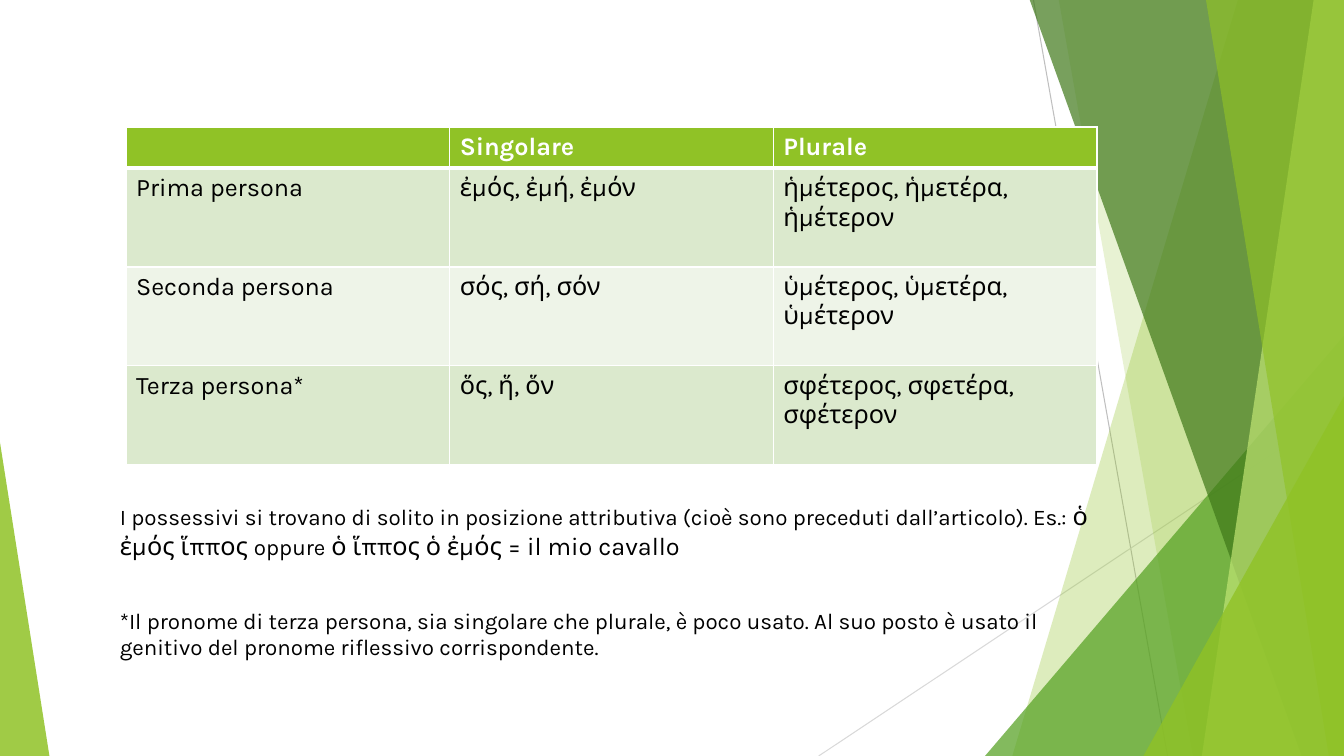
"""Build a slide on Greek possessive adjectives, with a table and two notes."""
import pptx
import pptx.dml.color
import pptx.enum.shapes
import pptx.oxml
import pptx.oxml.ns
import pptx.util
from pptx.util import Inches

FONT = "Karla"
COLORS = {
    "green": "90C226", "mid": "54A021", "dark": "3F7819", "lime": "C0E474",
    "band": "DBE9CD", "pale": "EEF4E8", "white": "FFFFFF", "black": "000000",
    "gray": "BFBFBF", "silver": "D9D9D9",
}
NS = pptx.oxml.ns.nsdecls("a")
TOP, BOTTOM, RIGHT = -0.01, 7.5, 13.33

ROWS = [
    ("", "Singolare", "Plurale"),
    ("Prima persona", "ἐμός, ἐμή, ἐμόν", "ἡμέτερος, ἡμετέρα, ἡμέτερον"),
    ("Seconda persona", "σός, σή, σόν", "ὑμέτερος, ὑμετέρα, ὑμέτερον"),
    ("Terza persona*", "ὅς, ἥ, ὅν", "σφέτερος, σφετέρα, σφέτερον"),
]
POSITION_NOTE = [
    ("I possessivi si trovano di solito in posizione attributiva "
     "(cioè sono preceduti dall’articolo). Es.: ", 16),
    ("ὁ ἐμός ἵππος ", 18),
    ("oppure", 16),
    (" ὁ ἵππος ὁ ἐμός = il mio cavallo", 18),
]
THIRD_PERSON_NOTE = [
    ("*Il pronome di terza persona, sia singolare che plurale, è poco usato. "
     "Al suo posto è usato il genitivo del pronome riflessivo corrispondente.", 16),
]


def rgb(name):
    """Return the named colour."""
    return pptx.dml.color.RGBColor.from_string(COLORS[name])


def paint(sp, color, opacity):
    """Fill a shape with a see-through colour and no outline."""
    sp.shadow.inherit = False
    sp.line.fill.background()
    sp.fill.solid()
    sp.fill.fore_color.rgb = rgb(color)
    clr = sp.fill._xPr.find(".//" + pptx.oxml.ns.qn("a:srgbClr"))
    clr.append(pptx.oxml.parse_xml(f'<a:alpha {NS} val="{opacity * 1000}"/>'))


def add_line(s, x1, y1, x2, y2, color):
    """Draw a thin straight line."""
    cn = s.shapes.add_connector(
        pptx.enum.shapes.MSO_CONNECTOR.STRAIGHT,
        Inches(x1), Inches(y1), Inches(x2), Inches(y2))
    cn.line.color.rgb = rgb(color)
    cn.line.width = pptx.util.Pt(0.75)
    cn._element.spPr.append(pptx.oxml.parse_xml(f"<a:effectLst {NS}/>"))


def add_shard(s, top_x, bottom_x, color, opacity):
    """Draw a full-height band from a slanted left edge to the slide's right."""
    fb = s.shapes.build_freeform(Inches(top_x), Inches(TOP))
    corners = [(RIGHT, TOP), (RIGHT, BOTTOM), (bottom_x, BOTTOM)]
    fb.add_line_segments([(Inches(x), Inches(y)) for x, y in corners], close=True)
    paint(fb.convert_to_shape(), color, opacity)


def add_triangle(s, x, y, w, apex, color, opacity):
    """Draw a right triangle standing on the slide's bottom edge."""
    sp = s.shapes.add_shape(
        pptx.enum.shapes.MSO_SHAPE.ISOSCELES_TRIANGLE,
        Inches(x), Inches(y), Inches(w), Inches(BOTTOM - y))
    sp.adjustments[0] = apex
    paint(sp, color, opacity)


def set_borders(cell, top, bottom):
    """Give a cell white borders, with top and bottom widths in points."""
    tcPr = cell._tc.get_or_add_tcPr()
    for side, width in (("L", 1), ("R", 1), ("T", top), ("B", bottom)):
        tcPr.append(pptx.oxml.parse_xml(
            f'<a:ln{side} {NS} w="{pptx.util.Pt(width)}"><a:solidFill>'
            f'<a:srgbClr val="{COLORS["white"]}"/></a:solidFill></a:ln{side}>'))


def style_font(font, size, color):
    """Set typeface, size and colour."""
    font.name = FONT
    font.size = pptx.util.Pt(size)
    font.color.rgb = rgb(color)


def add_possessives(s):
    """Add the table of possessives."""
    tbl = s.shapes.add_table(
        len(ROWS), 3, Inches(1.25), Inches(1.26), Inches(9.63), Inches(3.35)).table
    for col in tbl.columns:
        col.width = Inches(3.21)
    for i, row in enumerate(ROWS):
        tbl.rows[i].height = Inches(0.98 if i else 0.41)
        for j, text in enumerate(row):
            cell = tbl.cell(i, j)
            set_borders(cell, 3 if i == 1 else 1, 1 if i else 3)
            cell.fill.solid()
            cell.fill.fore_color.rgb = rgb(("green", "band", "pale", "band")[i])
            cell.text = text
            p = cell.text_frame.paragraphs[0]
            style_font(p.font, 18, "black" if i else "white")
            p.font.bold = i == 0


def add_note(s, x, y, w, h, runs):
    """Add a wrapped paragraph made of runs of given sizes."""
    tf = s.shapes.add_textbox(Inches(x), Inches(y), Inches(w), Inches(h)).text_frame
    tf.word_wrap = True
    p = tf.paragraphs[0]
    for text, size in runs:
        r = p.add_run()
        r.text = text
        style_font(r.font, size, "black")


def main():
    """Build and save the slide."""
    prs = pptx.Presentation()
    prs.slide_width, prs.slide_height = Inches(13.33), Inches(7.5)
    s = prs.slides.add_slide(prs.slide_layouts[6])
    add_line(s, 10.25, 0, 11.58, 7.5, "gray")
    add_line(s, 13.33, 4.03, 8.12, 7.5, "silver")
    add_shard(s, 12.28, 10.04, "green", 30)
    add_shard(s, 10.5, 11.83, "green", 20)
    add_triangle(s, 9.77, 3.33, 3.56, 1, "mid", 72)
    add_shard(s, 10.21, 12.91, "dark", 70)
    add_shard(s, 13.03, 11.92, "lime", 70)
    add_shard(s, 11.96, 13.18, "green", 65)
    add_triangle(s, 11.34, 3.93, 1.99, 1, "green", 80)
    add_triangle(s, 0, 4.39, 0.49, 0, "green", 85)
    add_possessives(s)
    add_note(s, 1.09, 5.97, 10, 0.64, THIRD_PERSON_NOTE)
    add_note(s, 1.09, 4.91, 9.8, 1.01, POSITION_NOTE)
    prs.save("out.pptx")


if __name__ == "__main__":
    main()
